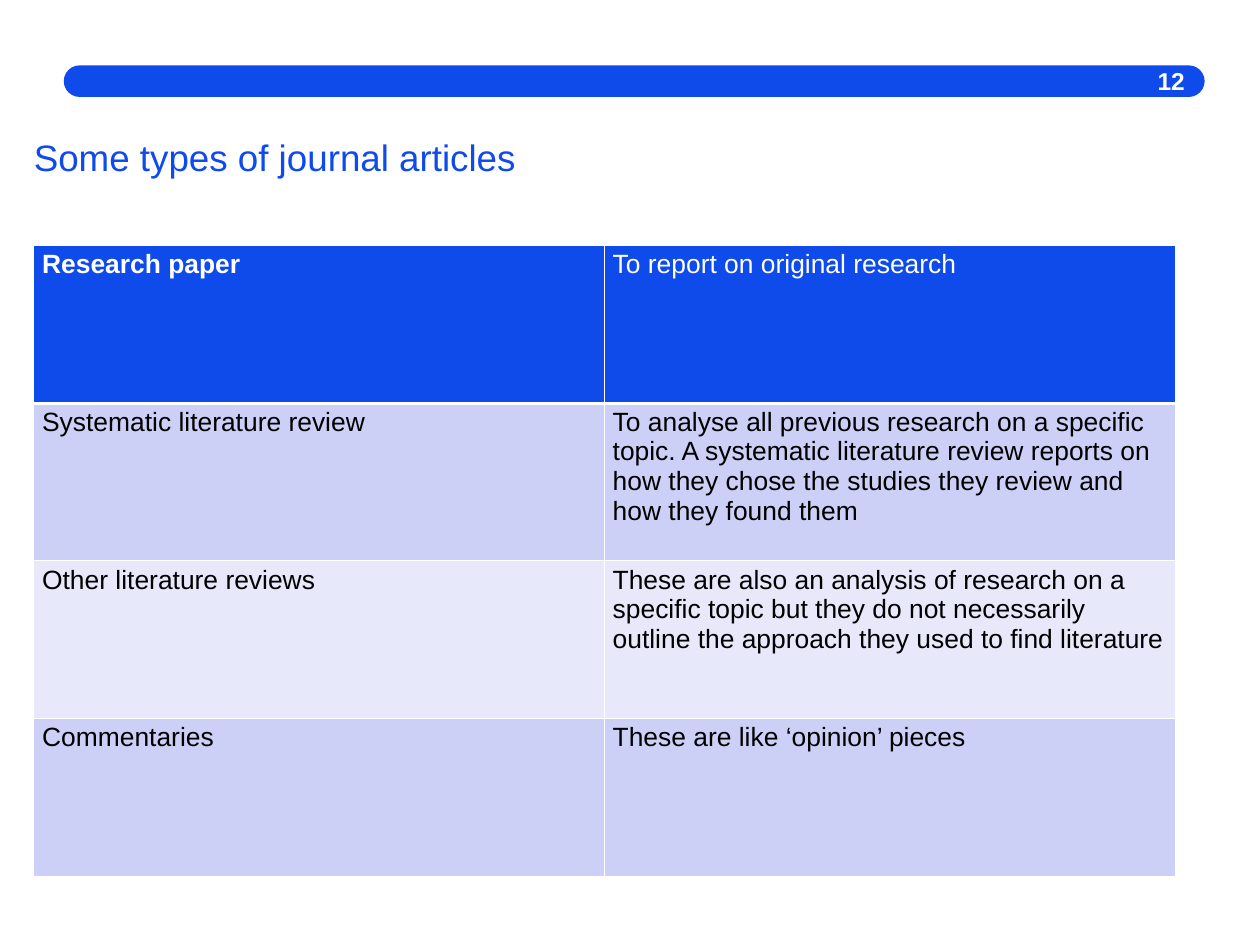
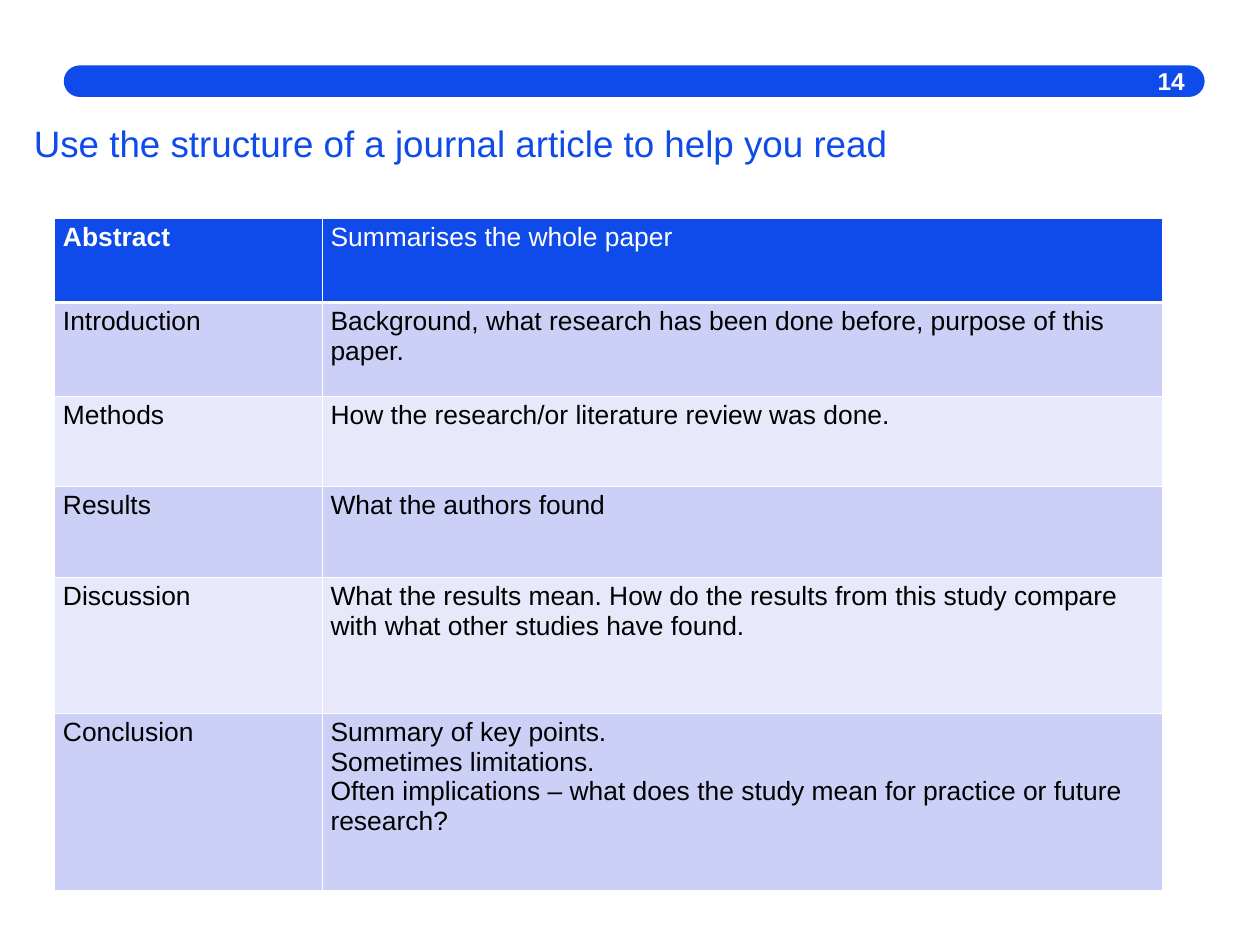
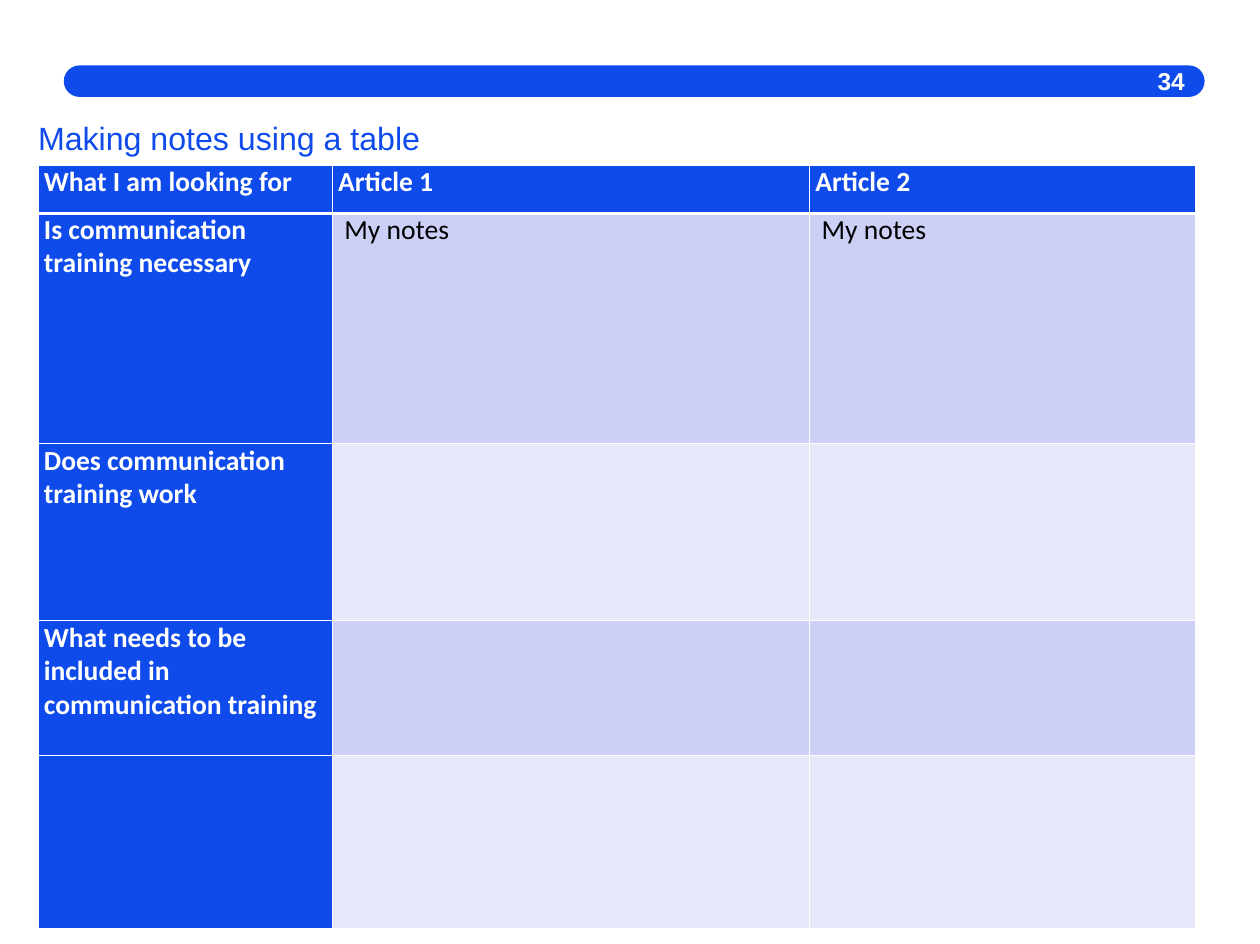
import pptx
import pptx.dml.color
import pptx.enum.shapes
import pptx.enum.text
import pptx.oxml
import pptx.oxml.ns
import pptx.util

Cm = pptx.util.Cm
Pt = pptx.util.Pt
ALIGN = pptx.enum.text.PP_ALIGN
ANCHOR = pptx.enum.text.MSO_ANCHOR

COLORS = {"blue": "0F4BEB", "white": "FFFFFF", "black": "000000",
          "band_dark": "CCD0F7", "band_light": "E7E9FB"}
SLIDE_SIZE = (38.71, 29.01)
BAR_BOX = (1.96, 2.01, 35.05, 0.97)
NUMBER_BOX = (34.87, 2.01, 1.78, 0.97)
TITLE_LINE = 52
GRID_LINE, HEADER_LINE = 1, 3

ARIAL_TABLE = {"font": "Arial", "size": 23, "margins": {}, "bold_heads": False}
NOTES_TABLE = {
    "font": "Calibri", "size": 24, "bold_heads": True,
    "margins": {"margin_left": Cm(0.18), "margin_right": Cm(0.18),
                "margin_top": 0, "margin_bottom": 0},
}


def rgb(name):
    return pptx.dml.color.RGBColor.from_string(COLORS[name])


def set_attrs(obj, values):
    for name, value in values.items():
        setattr(obj, name, value)


def set_font(font, name, size, color, bold=False):
    set_attrs(font, {"name": name, "size": Pt(size), "bold": bold})
    font.color.rgb = rgb(color)


def add_text(s, box, text, size, color, bold=False, frame=None, para=None):
    """Add a one-paragraph Arial text box; frame and para hold format values."""
    tf = s.shapes.add_textbox(*map(Cm, box)).text_frame
    set_attrs(tf, {"word_wrap": True, **(frame or {})})
    p = tf.paragraphs[0]
    set_attrs(p, para or {})
    r = p.add_run()
    r.text = text
    set_font(r.font, "Arial", size, color, bold)


def add_bar(s, number):
    sp = s.shapes.add_shape(pptx.enum.shapes.MSO_SHAPE.ROUNDED_RECTANGLE,
                            *map(Cm, BAR_BOX))
    sp.adjustments[0] = 0.5
    sp.shadow.inherit = False
    sp.fill.solid()
    sp.fill.fore_color.rgb = rgb("blue")
    sp.line.fill.background()
    add_text(s, NUMBER_BOX, str(number), 21.3, "white", True,
             {"vertical_anchor": ANCHOR.MIDDLE}, {"alignment": ALIGN.RIGHT})


def add_title(s, box, text, size):
    margins = ("margin_left", "margin_top", "margin_right", "margin_bottom")
    add_text(s, box, text, size, "blue", frame=dict.fromkeys(margins, 0),
             para={"line_spacing": Pt(TITLE_LINE)})


def set_borders(cell, top, bottom):
    """Draw white cell borders; the left and right ones are thin."""
    tcPr = cell._tc.get_or_add_tcPr()
    widths = {"lnL": GRID_LINE, "lnR": GRID_LINE, "lnT": top, "lnB": bottom}
    for tag, width in widths.items():
        tcPr.append(pptx.oxml.parse_xml(
            f'<a:{tag} {pptx.oxml.ns.nsdecls("a")} w="{Pt(width)}">'
            f'<a:solidFill><a:srgbClr val="{COLORS["white"]}"/></a:solidFill>'
            f'</a:{tag}>'))


def fill_cell(cell, text, row, col, style):
    is_head = row == 0 or (style["bold_heads"] and col == 0)
    set_borders(cell, HEADER_LINE if row == 1 else GRID_LINE,
                HEADER_LINE if row == 0 else GRID_LINE)
    cell.fill.solid()
    band = "band_dark" if row % 2 else "band_light"
    cell.fill.fore_color.rgb = rgb("blue" if is_head else band)
    set_attrs(cell, style["margins"])
    cell.text = text
    bold = is_head and (style["bold_heads"] or col == 0)
    for p in cell.text_frame.paragraphs:
        set_font(p.font, style["font"], style["size"],
                 "white" if is_head else "black", bold)
        for r in p.runs:
            set_font(r.font, style["font"], style["size"],
                     "white" if is_head else "black", bold)


def add_table(s, left, top, widths, heights, rows, style):
    size = (left, top, sum(widths), sum(heights))
    table = s.shapes.add_table(len(rows), len(widths), *map(Cm, size)).table
    for column, width in zip(table.columns, widths):
        column.width = Cm(width)
    for i, (height, texts) in enumerate(zip(heights, rows)):
        table.rows[i].height = Cm(height)
        for j, text in enumerate(texts):
            fill_cell(table.cell(i, j), text, i, j, style)


def add_slide(prs, number, title_box, title, title_size, **table):
    s = prs.slides.add_slide(prs.slide_layouts[6])
    add_bar(s, number)
    add_title(s, title_box, title, title_size)
    add_table(s, **table)


def main():
    prs = pptx.Presentation()
    prs.slide_width, prs.slide_height = map(Cm, SLIDE_SIZE)

    add_slide(
        prs, 12, (1.04, 3.66, 36.65, 3.23), "Some types of journal articles", 32,
        left=1.04, top=7.54, widths=[17.53] * 2, heights=[4.85] * 4,
        style=ARIAL_TABLE,
        rows=[
            ("Research paper", "To report on original research"),
            ("Systematic literature review",
             "To analyse all previous research on a specific topic. A systematic "
             "literature review reports on how they chose the studies they review "
             "and how they found them"),
            ("Other literature reviews",
             "These are also an analysis of research on a specific topic but they "
             "do not necessarily outline the approach they used to find literature"),
            ("Commentaries", "These are like ‘opinion’ pieces"),
        ])

    add_slide(
        prs, 14, (1.04, 3.23, 34.67, 3.25),
        "Use the structure of a journal article to help you read", 32,
        left=1.68, top=6.71, widths=[8.22, 25.82],
        heights=[2.59, 2.87, 2.79, 2.79, 4.17, 5.46], style=ARIAL_TABLE,
        rows=[
            ("Abstract", "Summarises the whole paper"),
            ("Introduction", "Background, what research has been done before, "
                             "purpose of this paper."),
            ("Methods", "How the research/or literature review was done."),
            ("Results", "What the authors found"),
            ("Discussion", "What the results mean. How do the results from this "
                           "study compare with what other studies have found."),
            ("Conclusion", "Summary of key points.\nSometimes limitations.\n"
                           "Often implications – what does the study mean for "
                           "practice or future research?"),
        ])

    add_slide(
        prs, 34, (1.17, 3, 34.7, 1.42), "Making notes using a table", 28,
        left=1.17, top=5.08, widths=[9.04, 14.66, 11.86],
        heights=[1.47, 7.09, 5.44, 4.14, 5.31], style=NOTES_TABLE,
        rows=[
            ("What I am looking for", "Article 1", "Article 2"),
            ("Is communication training necessary", " My notes", " My notes"),
            ("Does communication training work", "", ""),
            ("What needs to be included in communication training", "", ""),
            ("", "", ""),
        ])

    prs.save("out.pptx")


if __name__ == "__main__":
    main()
